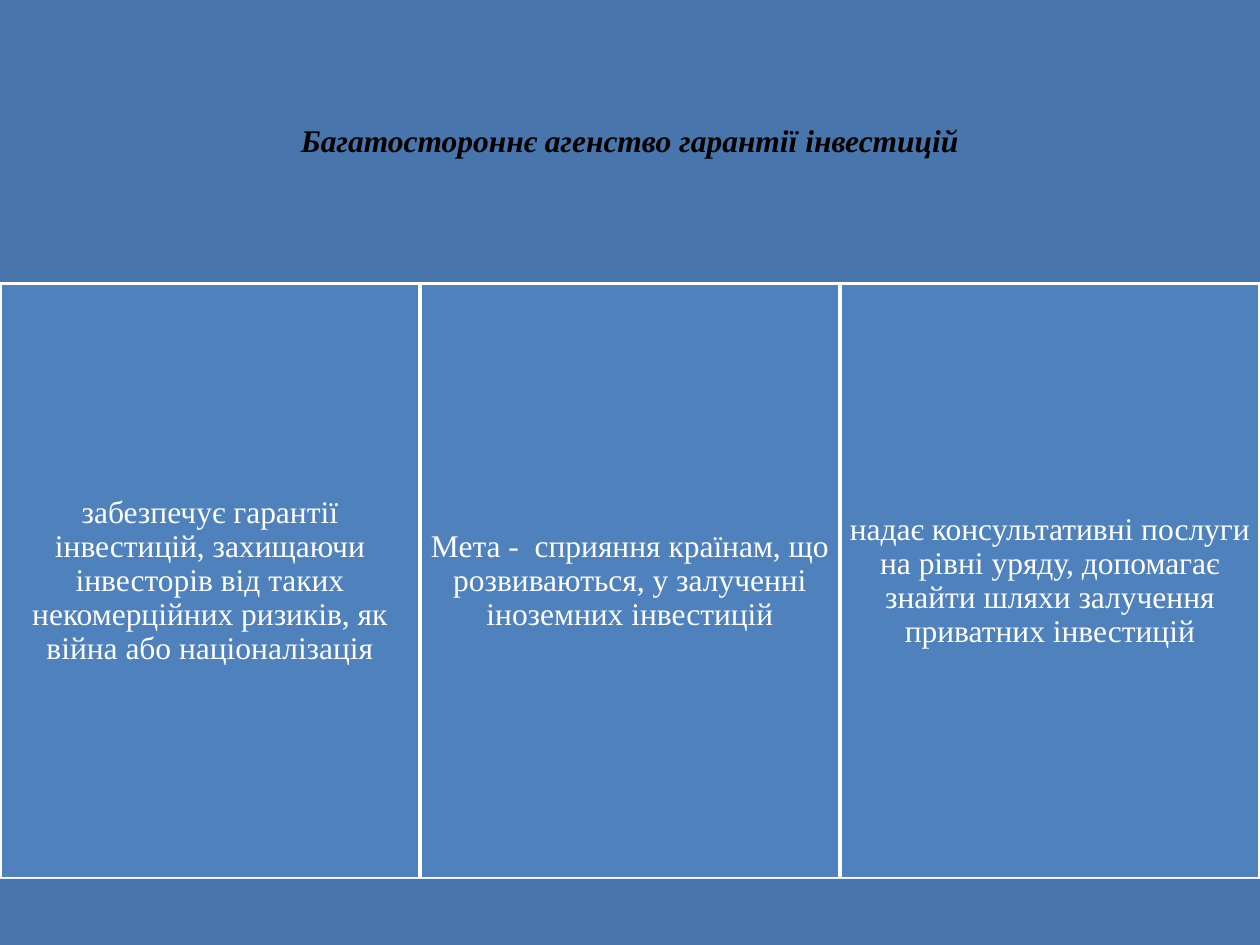
"""Build a slide with a title band, three equal columns and a bottom band."""
from pptx import Presentation
from pptx.dml.color import RGBColor
from pptx.enum.shapes import MSO_SHAPE as Shape
from pptx.enum.text import MSO_ANCHOR as Anchor, PP_ALIGN as Align
from pptx.util import Cm, Pt

BAND = RGBColor(0x48, 0x75, 0xAC)
COLUMN = RGBColor(0x4F, 0x81, 0xBD)
WHITE = RGBColor(0xFF, 0xFF, 0xFF)
BLACK = RGBColor(0x00, 0x00, 0x00)

WIDTH, HEIGHT = 25.4, 19.05
TITLE_H, COLUMN_H = 5.72, 12
TITLE = "Багатостороннє агенство гарантії інвестицій"
COLUMNS = [
    "забезпечує гарантії інвестицій, захищаючи інвесторів від таких "
    "некомерційних ризиків, як війна або націоналізація",
    "Мета -  сприяння країнам, що розвиваються, у залученні іноземних інвестицій",
    "надає консультативні послуги на рівні уряду, допомагає знайти шляхи "
    "залучення приватних інвестицій",
]


def write(sp, text, font="Times New Roman", size=18, color=WHITE, bold=False, italic=False):
    tf = sp.text_frame
    tf.word_wrap = True
    tf.vertical_anchor = Anchor.MIDDLE
    tf.margin_left = tf.margin_right = tf.margin_top = tf.margin_bottom = Cm(0.18)
    p = tf.paragraphs[0]
    p.alignment = Align.CENTER
    p.line_spacing = 0.9
    r = p.add_run()
    r.text = text
    r.font.name, r.font.size = font, Pt(size)
    r.font.bold, r.font.italic = bold, italic
    r.font.color.rgb = color


class Deck:
    def __init__(self, prs):
        self.s = prs.slides.add_slide(prs.slide_layouts[6])
        self.line_width = Pt(2)

    def rect(self, x, y, w, h, fill):
        sp = self.s.shapes.add_shape(Shape.RECTANGLE, Cm(x), Cm(y), Cm(w), Cm(h))
        sp.shadow.inherit = False
        sp.fill.solid()
        sp.fill.fore_color.rgb = fill
        return sp

    def band(self, y, h):
        sp = self.rect(0, y, WIDTH, h, BAND)
        sp.line.fill.background()
        return sp

    def column(self, x, y, w, h, text):
        sp = self.rect(x, y, w, h, COLUMN)
        sp.line.color.rgb = WHITE
        sp.line.width = self.line_width
        write(sp, text)


def main():
    prs = Presentation()
    prs.slide_width, prs.slide_height = Cm(WIDTH), Cm(HEIGHT)
    deck = Deck(prs)
    write(deck.band(0, TITLE_H), TITLE, color=BLACK, bold=True, italic=True)
    column_w = WIDTH / len(COLUMNS)
    for i, text in enumerate(COLUMNS):
        deck.column(i * column_w, TITLE_H, column_w, COLUMN_H, text)
    bottom = TITLE_H + COLUMN_H
    deck.band(bottom, HEIGHT - bottom)
    prs.save("out.pptx")


if __name__ == "__main__":
    main()
